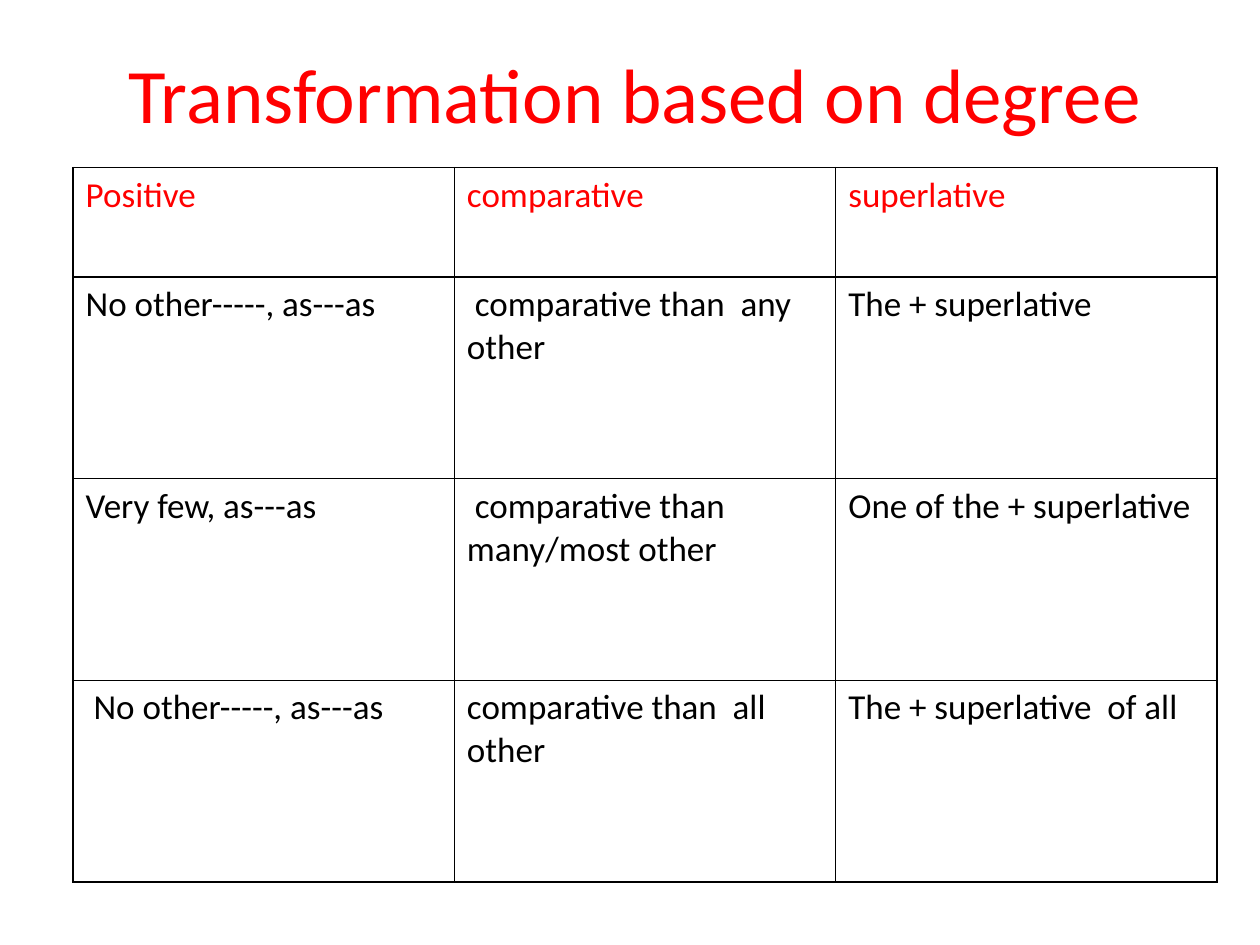
from pptx import Presentation
from pptx.dml.color import RGBColor
from pptx.enum import text
from pptx.oxml import parse_xml
from pptx.oxml.ns import nsdecls
from pptx.util import Inches, Pt

RED = RGBColor(0xFF, 0x00, 0x00)
BLACK = RGBColor(0x00, 0x00, 0x00)
FONT = "Calibri"
ROWS = [
    ("Positive", "comparative", "superlative"),
    ("No other-----, as---as", " comparative than  any other", "The + superlative"),
    ("Very few, as---as", " comparative than  many/most other", "One of the + superlative"),
    (" No other-----, as---as", "comparative than  all other", "The + superlative  of all"),
]
HEADER_HEIGHT = 0.87


def style_paragraph(para, size, color):
    """Set the font of a whole paragraph."""
    para.font.name = FONT
    para.font.size = Pt(size)
    para.font.color.rgb = color


def set_borders(cell):
    """Draw a thin black line on all four sides of a cell."""
    properties = cell._tc.get_or_add_tcPr()
    for index, side in enumerate(("lnL", "lnR", "lnT", "lnB")):
        line = parse_xml(
            f'<a:{side} {nsdecls("a")} w="{Pt(1)}"><a:solidFill>'
            f'<a:srgbClr val="{BLACK}"/></a:solidFill></a:{side}>'
        )
        properties.insert(index, line)


def add_title(slide, left, top, width, height):
    """Place the heading in the title placeholder."""
    title = slide.shapes.title
    title.left, title.top = Inches(left), Inches(top)
    title.width, title.height = Inches(width), Inches(height)
    frame = title.text_frame
    frame.text = "Transformation based on degree"
    frame.vertical_anchor = text.MSO_ANCHOR.MIDDLE
    para = frame.paragraphs[0]
    para.alignment = text.PP_ALIGN.CENTER
    style_paragraph(para, 44, RED)


def add_degree_table(slide, left, top, width, height):
    """Place the table of degrees with a red header row."""
    frame = slide.shapes.add_table(
        len(ROWS), len(ROWS[0]), Inches(left), Inches(top), Inches(width), Inches(height)
    )
    table = frame.table
    table.first_row = table.horz_banding = False
    body_height = (height - HEADER_HEIGHT) / (len(ROWS) - 1)
    for column in table.columns:
        column.width = Inches(width / len(ROWS[0]))
    for row_index, words in enumerate(ROWS):
        is_header = row_index == 0
        table.rows[row_index].height = Inches(HEADER_HEIGHT if is_header else body_height)
        for column_index, wording in enumerate(words):
            cell = table.cell(row_index, column_index)
            cell.text = wording
            cell.fill.background()
            set_borders(cell)
            style_paragraph(cell.text_frame.paragraphs[0], 20, RED if is_header else BLACK)


def main():
    """Build and save the deck."""
    deck = Presentation()
    deck.slide_width, deck.slide_height = Inches(10), Inches(7.5)
    page = deck.slides.add_slide(deck.slide_layouts[5])
    add_title(page, 0.5, 0.3, 9.08, 0.87)
    add_degree_table(page, 0.58, 1.33, 9.08, 5.67)
    deck.save("out.pptx")


if __name__ == "__main__":
    main()
